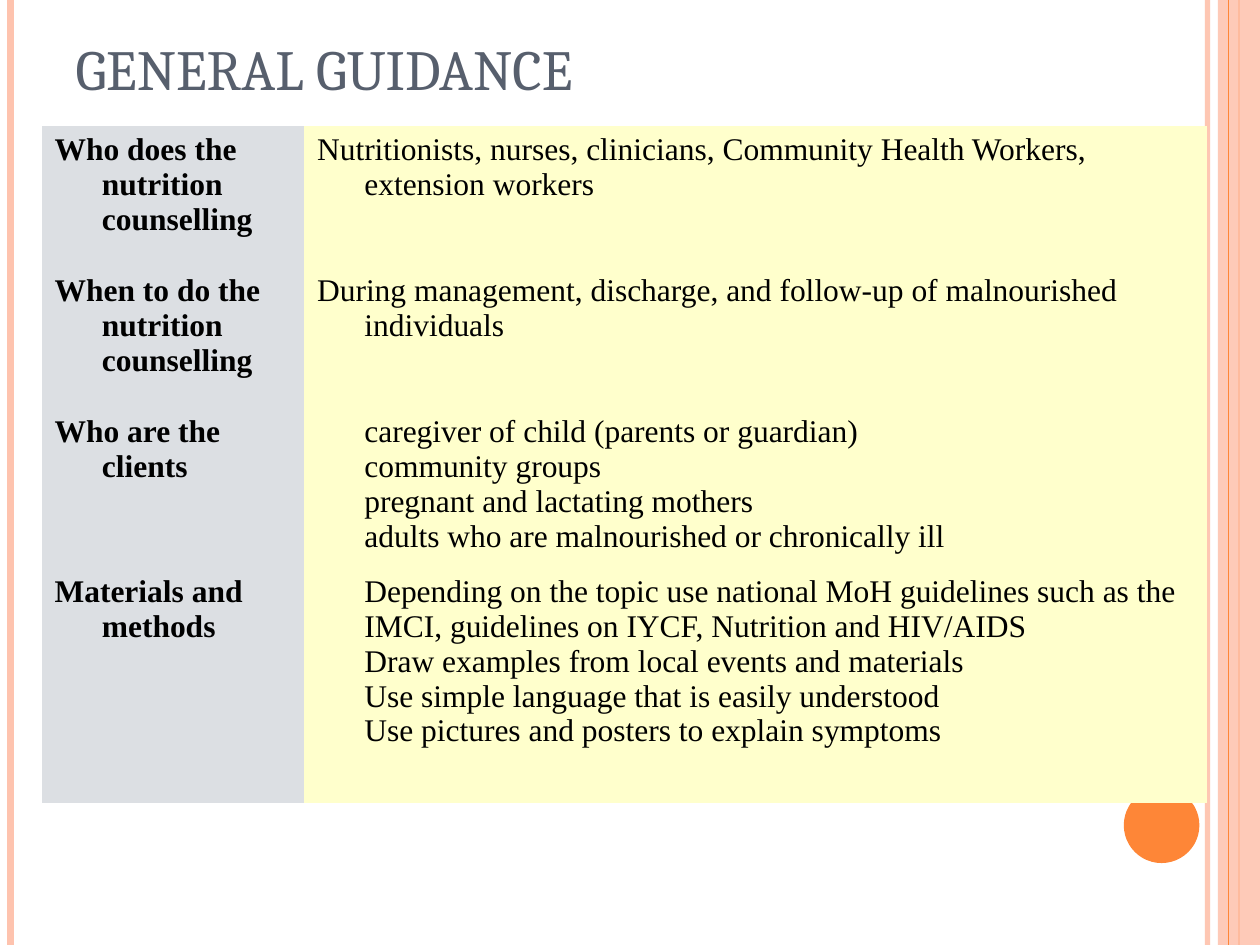
from dataclasses import dataclass

from lxml.etree import SubElement
from pptx import Presentation
from pptx.dml.color import RGBColor
from pptx.enum.shapes import MSO_CONNECTOR as Connector, MSO_SHAPE as Preset
from pptx.enum.text import MSO_ANCHOR as Anchor, MSO_AUTO_SIZE as AutoSize, PP_ALIGN as Align
from pptx.oxml.ns import qn
from pptx.util import Pt

COLORS = {
    "peach": "FEC3AE", "orange": "FE8637", "slate": "575F6D",
    "label": "DCDFE3", "answer": "FFFFCC", "text": "000000",
}
SLIDE_W, SLIDE_H = 720, 540
HANGING = 27
NO_STYLE = "{2D5ABB26-0587-4C30-8999-92F81FD0307C}"
CLOCK = "·"  # the one o'clock face in Wingdings


@dataclass
class Stripe:
    x: float
    width: float
    color: str
    opacity: int = 100


@dataclass
class Topic:
    question: str
    answers: list[str]
    height: float

    @property
    def bulleted(self) -> bool:
        return len(self.answers) > 1


EDGE_STRIPES = [
    Stripe(690, 3, "peach", 93),
    Stripe(6, 4.5, "peach"),
    Stripe(708, 1.5, "orange"),
]
BAND_STRIPE = Stripe(702, 0.75, "orange")

TOPICS = [
    Topic("Who does the nutrition counselling",
          ["Nutritionists, nurses, clinicians, Community Health Workers, extension workers"], 80.6),
    Topic("When to do the nutrition counselling",
          ["During management, discharge, and follow-up of malnourished individuals"], 80.6),
    Topic("Who are the clients",
          ["caregiver of child (parents or guardian)",
           "community groups",
           "pregnant and lactating mothers",
           "adults who are malnourished or chronically ill"], 91.4),
    Topic("Materials and methods",
          ["Depending on the topic use national MoH guidelines such as the IMCI, "
           "guidelines on IYCF, Nutrition and HIV/AIDS",
           "Draw examples from local events and materials",
           "Use simple language that is easily understood",
           "Use pictures and posters to explain symptoms"], 134.3),
]


def rgb(name: str) -> RGBColor:
    return RGBColor.from_string(COLORS[name])


def set_opacity(element, percent: int) -> None:
    color = next(element.iter(qn("a:srgbClr")))
    SubElement(color, qn("a:alpha"), val=str(percent * 1000))


def draw_stripe(slide, stripe: Stripe) -> None:
    line = slide.shapes.add_connector(
        Connector.STRAIGHT, Pt(stripe.x), Pt(0), Pt(stripe.x), Pt(SLIDE_H))
    line.line.color.rgb = rgb(stripe.color)
    line.line.width = Pt(stripe.width)
    properties = line._element.spPr
    if stripe.opacity < 100:
        set_opacity(properties, stripe.opacity)
    SubElement(properties, qn("a:effectLst"))


def draw_solid(slide, preset, x: float, y: float, w: float, h: float, color: str):
    solid = slide.shapes.add_shape(preset, Pt(x), Pt(y), Pt(w), Pt(h))
    solid.shadow.inherit = False
    solid.fill.solid()
    solid.fill.fore_color.rgb = rgb(color)
    solid.line.fill.background()
    return solid


def style_run(run, font: str, size: float, color: str, bold: bool = False) -> None:
    run.font.name = font
    run.font.size = Pt(size)
    run.font.bold = bold
    run.font.color.rgb = rgb(color)


def add_clock_bullet(properties) -> None:
    SubElement(properties, qn("a:buFont"), typeface="Wingdings", pitchFamily="2", charset="2")
    SubElement(properties, qn("a:buChar"), char=CLOCK)
    tabs = SubElement(properties, qn("a:tabLst"))
    SubElement(tabs, qn("a:tab"), pos=str(Pt(36)), algn="l")


def fill_cell(cell, lines: list[str], color: str, bold: bool = False,
              bulleted: bool = False) -> None:
    cell.fill.solid()
    cell.fill.fore_color.rgb = rgb(color)
    cell.text_frame.text = "\n".join(lines)
    for paragraph in cell.text_frame.paragraphs:
        style_run(paragraph.runs[0], "Times New Roman", 18, "text", bold)
        properties = paragraph._p.get_or_add_pPr()
        properties.set("marL", str(Pt(HANGING)))
        properties.set("indent", str(-Pt(HANGING)))
        if bulleted:
            add_clock_bullet(properties)


def draw_title(slide) -> None:
    title = slide.shapes.title
    title.left, title.top, title.width, title.height = Pt(36), Pt(24), Pt(600), Pt(38)
    frame = title.text_frame
    frame.text = "GENERAL GUIDANCE"
    frame.auto_size = AutoSize.NONE
    frame.vertical_anchor = Anchor.BOTTOM
    frame.paragraphs[0].alignment = Align.LEFT
    style_run(frame.paragraphs[0].runs[0], "Cambria", 32.4, "slate")


def draw_guidance(slide, topics: list[Topic]) -> None:
    height = sum(topic.height for topic in topics)
    guidance = slide.shapes.add_table(
        len(topics), 2, Pt(24), Pt(72), Pt(666), Pt(height)).table
    guidance.first_row = guidance.horz_banding = False
    guidance._tbl.tblPr.find(qn("a:tableStyleId")).text = NO_STYLE
    for column, width in zip(guidance.columns, (150, 516)):
        column.width = Pt(width)
    for row, topic in zip(guidance.rows, topics):
        row.height = Pt(topic.height)
        question, answer = row.cells
        fill_cell(question, [topic.question], "label", bold=True)
        fill_cell(answer, topic.answers, "answer", bulleted=topic.bulleted)


def main() -> None:
    deck = Presentation()
    deck.slide_width, deck.slide_height = Pt(SLIDE_W), Pt(SLIDE_H)
    slide = deck.slides.add_slide(deck.slide_layouts[5])

    # Side decoration
    for stripe in EDGE_STRIPES:
        draw_stripe(slide, stripe)
    band = draw_solid(slide, Preset.RECTANGLE, 696, 0, 24, SLIDE_H, "peach")
    set_opacity(band._element.spPr, 87)
    draw_stripe(slide, BAND_STRIPE)
    draw_solid(slide, Preset.OVAL, 642.2, 450, 43.2, 43.2, "orange")

    # Content
    draw_title(slide)
    draw_guidance(slide, TOPICS)

    deck.save("out.pptx")


if __name__ == "__main__":
    main()
